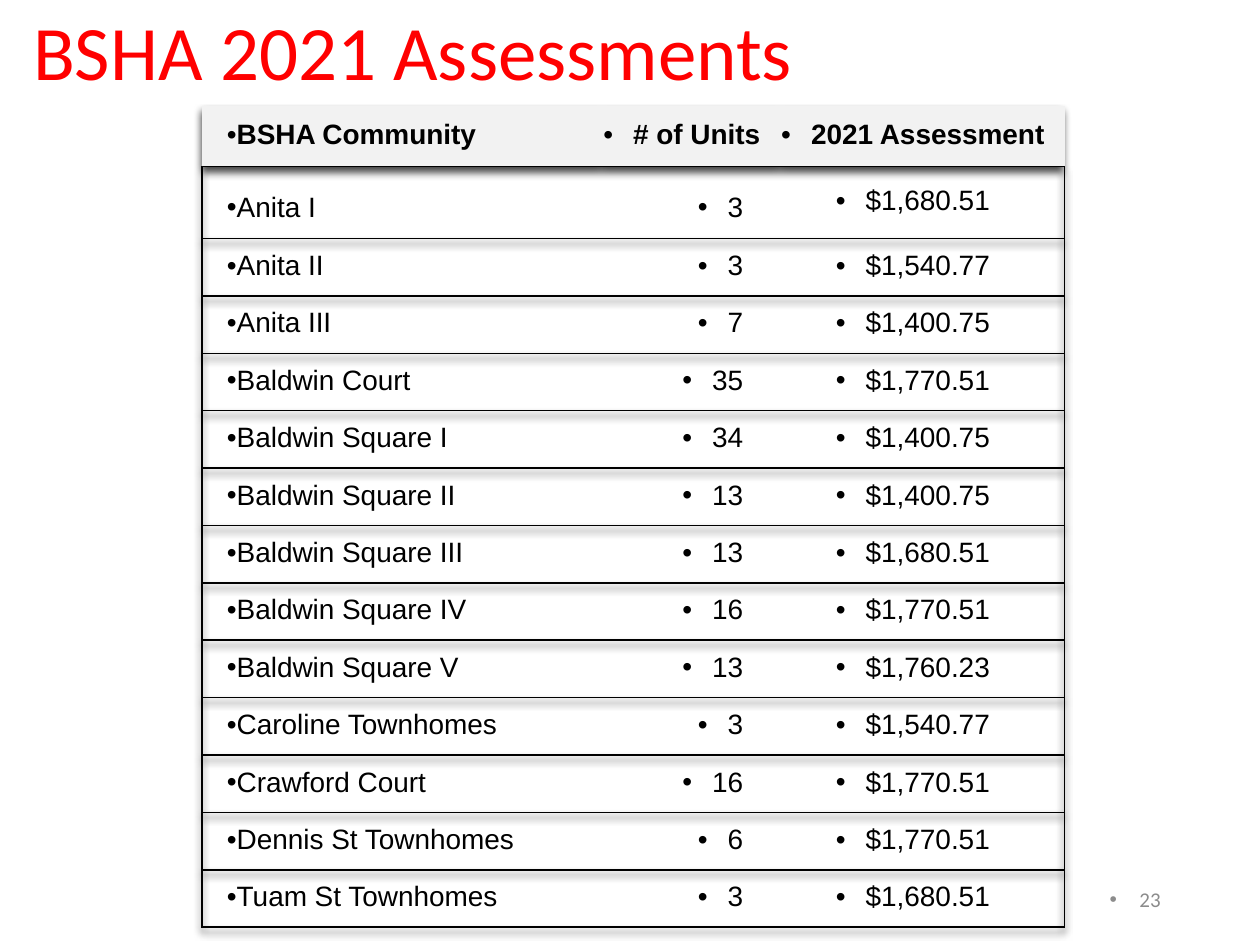
from typing import NamedTuple

from lxml.etree import SubElement
from pptx import Presentation
from pptx.dml.color import RGBColor
from pptx.enum.text import MSO_ANCHOR, PP_ALIGN
from pptx.oxml.ns import qn
from pptx.util import Pt

BLACK = RGBColor(0x00, 0x00, 0x00)
RED = RGBColor(0xFF, 0x00, 0x00)
GRAY = RGBColor(0x8C, 0x8C, 0x8C)
HEADER_FILL = RGBColor(0xF2, 0xF2, 0xF2)
NO_STYLE = "{2D5ABB26-0587-4C30-8999-92F81FD0307C}"


class Column(NamedTuple):
    title: str
    width: float
    align: PP_ALIGN
    left: float
    right: float
    first_top: float
    sides: tuple


class Assessment(NamedTuple):
    community: str
    units: str
    amount: str


class Label(NamedTuple):
    text: str
    box: tuple
    font: str
    size: float
    color: RGBColor
    align: PP_ALIGN
    spacing: float
    bullet: bool


COLUMNS = [
    Column("BSHA Community", 229, PP_ALIGN.LEFT, 14.4, 0, 7.2, ("L", "T", "B")),
    Column("# of Units", 102, PP_ALIGN.RIGHT, 0, 21.6, 7.2, ("T", "B")),
    Column("2021 Assessment", 162, PP_ALIGN.CENTER, 0, 0, 0, ("R", "T", "B")),
]
ASSESSMENTS = [
    Assessment("Anita I", "3", "$1,680.51"),
    Assessment("Anita II", "3", "$1,540.77"),
    Assessment("Anita III", "7", "$1,400.75"),
    Assessment("Baldwin Court", "35", "$1,770.51"),
    Assessment("Baldwin Square I", "34", "$1,400.75"),
    Assessment("Baldwin Square II", "13", "$1,400.75"),
    Assessment("Baldwin Square III", "13", "$1,680.51"),
    Assessment("Baldwin Square IV", "16", "$1,770.51"),
    Assessment("Baldwin Square V", "13", "$1,760.23"),
    Assessment("Caroline Townhomes", "3", "$1,540.77"),
    Assessment("Crawford Court", "16", "$1,770.51"),
    Assessment("Dennis St Townhomes", "6", "$1,770.51"),
    Assessment("Tuam St Townhomes", "3", "$1,680.51"),
]
HEADER_HEIGHT, FIRST_HEIGHT, ROW_HEIGHT = 34.8, 41, 32.8
BULLET_MARGIN, BULLET_HANG = 5.7, 17
LABELS = [
    Label("BSHA 2021 Assessments", (11.9, 2.9, 698.4, 57.6), "Calibri", 44,
          RED, PP_ALIGN.LEFT, 0.9, False),
    Label("23", (508.3, 499.4, 162, 28.8), "Calibri", 12,
          GRAY, PP_ALIGN.RIGHT, 1, True),
]


def add_bullet(p, align: PP_ALIGN) -> None:
    hanging = align != PP_ALIGN.LEFT
    pPr = p._p.get_or_add_pPr()
    pPr.set("marL", str(Pt(BULLET_MARGIN if hanging else 0)))
    pPr.set("indent", str(Pt(-BULLET_HANG if hanging else 0)))
    SubElement(pPr, qn("a:buFont"), typeface="Arial")
    SubElement(pPr, qn("a:buChar"), char="•")


def write_text(p, text: str, font: str, size: float, color: RGBColor,
               align: PP_ALIGN, spacing: float, bullet: bool, bold: bool = False) -> None:
    if bullet:
        add_bullet(p, align)
    p.alignment = align
    p.line_spacing = spacing
    r = p.add_run()
    r.text = text
    r.font.name = font
    r.font.size = Pt(size)
    r.font.bold = bold
    r.font.color.rgb = color


def add_borders(cell, sides: tuple) -> None:
    tcPr = cell._tc.get_or_add_tcPr()
    for i, side in enumerate(sides):
        ln = SubElement(tcPr, qn(f"a:ln{side}"), w=str(Pt(1)))
        fill = SubElement(ln, qn("a:solidFill"))
        SubElement(fill, qn("a:srgbClr"), val=str(BLACK))
        tcPr.remove(ln)
        tcPr.insert(i, ln)


def add_table_shadow(tblPr) -> None:
    effects = SubElement(tblPr, qn("a:effectLst"))
    shadow = SubElement(effects, qn("a:outerShdw"), blurRad=str(Pt(4)),
                        dist=str(Pt(3)), dir="5400000", algn="t", rotWithShape="0")
    color = SubElement(shadow, qn("a:srgbClr"), val=str(BLACK))
    SubElement(color, qn("a:alpha"), val="75000")
    tblPr.remove(effects)
    tblPr.insert(0, effects)


def fill_cell(cell, text: str, col: Column, row: int) -> None:
    header = row == 0
    cell.vertical_anchor = MSO_ANCHOR.MIDDLE
    cell.margin_left = Pt(col.left)
    cell.margin_right = Pt(0 if header else col.right)
    cell.margin_top = Pt(col.first_top if row == 1 else 0)
    cell.margin_bottom = Pt(0)
    if header:
        cell.fill.solid()
        cell.fill.fore_color.rgb = HEADER_FILL
    else:
        cell.fill.background()
    add_borders(cell, ("B",) if header else col.sides)
    align = PP_ALIGN.CENTER if header and col.left == 0 else col.align
    write_text(cell.text_frame.paragraphs[0], text, "Arial", 16, BLACK,
               align, 0.9, True, header)


def add_assessment_table(s) -> None:
    heights = [HEADER_HEIGHT, FIRST_HEIGHT] + [ROW_HEIGHT] * (len(ASSESSMENTS) - 1)
    width = sum(col.width for col in COLUMNS)
    table = s.shapes.add_table(len(heights), len(COLUMNS), Pt(115.3), Pt(60.5),
                               Pt(width), Pt(sum(heights))).table
    tblPr = table._tbl.tblPr
    tblPr.find(qn("a:tableStyleId")).text = NO_STYLE
    table.horz_banding = False
    add_table_shadow(tblPr)
    for column, col in zip(table.columns, COLUMNS):
        column.width = Pt(col.width)
    for row, height in zip(table.rows, heights):
        row.height = Pt(height)
    for i, values in enumerate([[col.title for col in COLUMNS], *ASSESSMENTS]):
        for j, (text, col) in enumerate(zip(values, COLUMNS)):
            fill_cell(table.cell(i, j), text, col, i)


def add_label(s, label: Label) -> None:
    sp = s.shapes.add_textbox(*map(Pt, label.box))
    tf = sp.text_frame
    tf.word_wrap = True
    tf.vertical_anchor = MSO_ANCHOR.MIDDLE
    write_text(tf.paragraphs[0], label.text, label.font, label.size, label.color,
               label.align, label.spacing, label.bullet)


def main() -> None:
    prs = Presentation()
    prs.slide_width, prs.slide_height = Pt(720), Pt(540)
    s = prs.slides.add_slide(prs.slide_layouts[6])
    add_assessment_table(s)
    for label in LABELS:
        add_label(s, label)
    prs.save("out.pptx")


if __name__ == "__main__":
    main()
